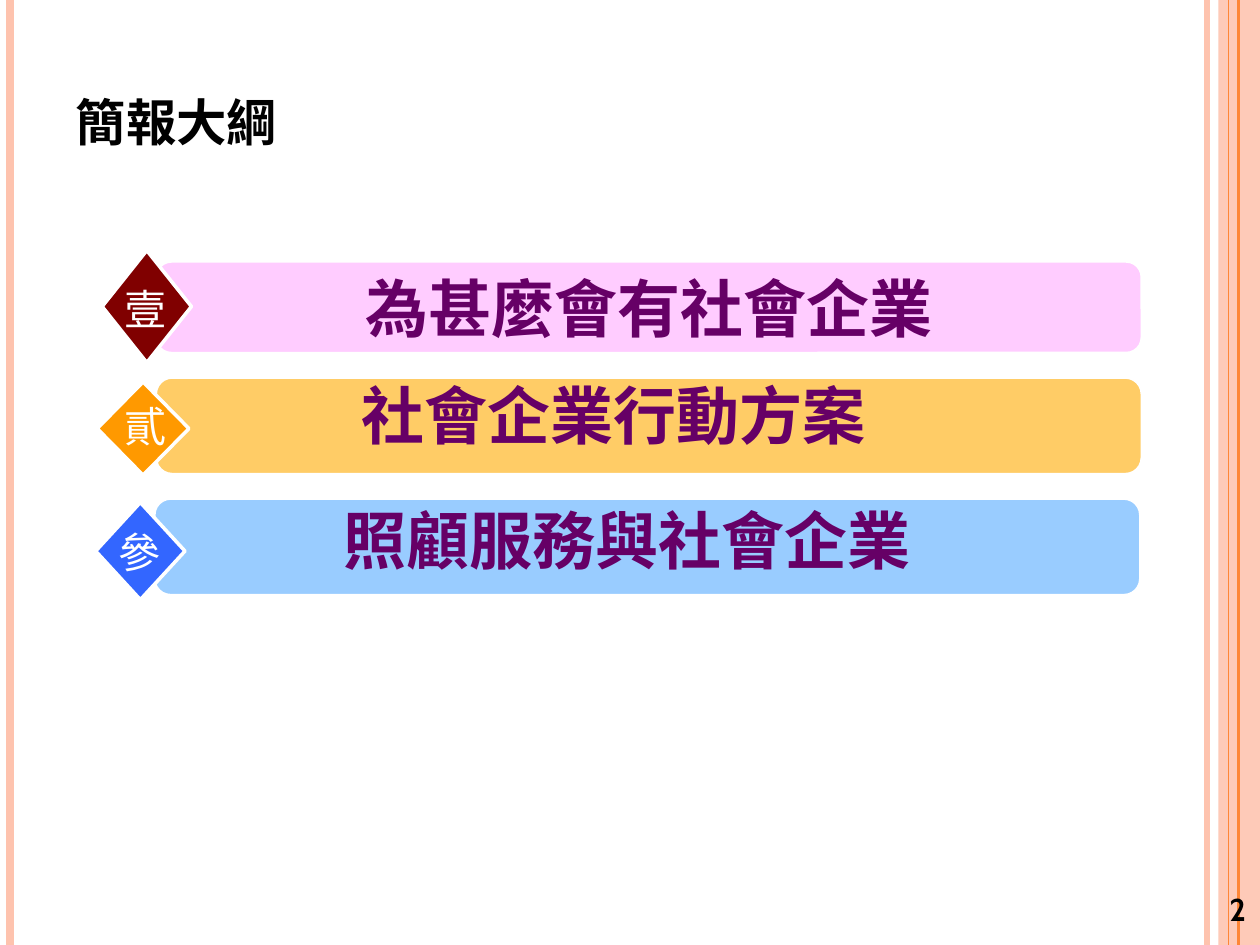
from lxml import etree
from pptx import Presentation
from pptx import util as u
from pptx.dml.color import RGBColor
from pptx.enum import shapes, text
from pptx.oxml.ns import qn

BLACK = RGBColor(0x00, 0x00, 0x00)
WHITE = RGBColor(0xFF, 0xFF, 0xFF)
PEACH = RGBColor(0xFE, 0xC3, 0xAE)
ORANGE = RGBColor(0xFE, 0x86, 0x37)
PURPLE = RGBColor(0x66, 0x00, 0x66)
PINK = RGBColor(0xFF, 0xCC, 0xFF)
MAROON = RGBColor(0x80, 0x00, 0x00)
GOLD = RGBColor(0xFF, 0xCC, 0x66)
AMBER = RGBColor(0xFF, 0x99, 0x00)
SKY = RGBColor(0x99, 0xCC, 0xFF)
BLUE = RGBColor(0x33, 0x66, 0xFF)
CJK = "Noto Sans CJK SC"
HEIGHT = 19.05


def add_block(kind, area, color, border):
    block = page.shapes.add_shape(kind, *map(u.Cm, area))
    block.shadow.inherit = False
    block.fill.solid()
    block.fill.fore_color.rgb = color
    if border:
        block.line.color.rgb = WHITE
        block.line.width = u.Pt(border)
    else:
        block.line.fill.background()
    return block


def write(box, words, face, size, color, bold, align, anchor):
    frame = box.text_frame
    frame.word_wrap = True
    frame.vertical_anchor = anchor
    para = frame.paragraphs[0]
    para.alignment = align
    span = para.add_run()
    span.text = words
    para.font.name = face
    para.font.size = u.Pt(size)
    para.font.bold = bold
    para.font.color.rgb = color
    latin = para.font._element.find(qn("a:latin"))
    east_asian = etree.Element(qn("a:ea"), typeface=face)
    latin.addnext(east_asian)
    return span


deck = Presentation()
deck.slide_width = u.Cm(25.4)
deck.slide_height = u.Cm(HEIGHT)
page = deck.slides.add_slide(deck.slide_layouts[5])
CENTER = text.PP_ALIGN.CENTER
MIDDLE = text.MSO_ANCHOR.MIDDLE
TOP = text.MSO_ANCHOR.TOP

band = add_block(shapes.MSO_SHAPE.RECTANGLE, (24.56, 0, 0.84, HEIGHT), PEACH, 0)
band_color = band.fill._xPr.find(qn("a:solidFill"))[0]
etree.SubElement(band_color, qn("a:alpha"), val="87000")

for x, color, width in [(24.33, PEACH, 3), (0.2, PEACH, 4.5),
                        (24.97, ORANGE, 1.5), (24.77, ORANGE, 0.75)]:
    stripe = page.shapes.add_connector(
        shapes.MSO_CONNECTOR.STRAIGHT, u.Cm(x), 0, u.Cm(x), u.Cm(HEIGHT))
    stripe.line.color.rgb = color
    stripe.line.width = u.Pt(width)
    etree.SubElement(stripe._element.spPr, qn("a:effectLst"))

title = page.shapes.title
title.left, title.top, title.width, title.height = map(u.Cm, (1.27, 0.76, 20.75, 3.18))
heading = write(title, "簡報大綱", "Arial", 36, BLACK, True, text.PP_ALIGN.LEFT, MIDDLE)
heading._r.get_or_add_rPr().set("cap", "small")

number = page.shapes.add_textbox(*map(u.Cm, (24.1, 17.6, 1.7, 1.45)))
write(number, "2", "Cabin", 18, BLACK, True, CENTER, MIDDLE)

sections = [
    ("壹", "為甚麼會有社會企業", PINK, MAROON, (3.15, 5.28, 19.86, 1.83),
     (2.06, 5.05, 1.8, 2.26), (1.96, 5.59, 1.96, 1.27), None),
    ("貳", "社會企業行動方案", GOLD, AMBER, (3.15, 7.62, 19.86, 1.93),
     (1.96, 7.7, 1.85, 1.88), (2.24, 7.95, 1.37, 1.3), (3.15, 7.47, 18.44, 1.8)),
    ("參", "照顧服務與社會企業", SKY, BLUE, (3.12, 10.06, 19.86, 1.93),
     (1.93, 10.13, 1.8, 1.96), (2.13, 10.49, 1.37, 1.27), (3.38, 9.98, 18.52, 1.78)),
]
for numeral, topic, bar_color, gem_color, bar_area, gem_area, numeral_area, topic_area in sections:
    bar = add_block(shapes.MSO_SHAPE.ROUNDED_RECTANGLE, bar_area, bar_color, 1)
    add_block(shapes.MSO_SHAPE.DIAMOND, gem_area, gem_color, 2)
    label = page.shapes.add_textbox(*map(u.Cm, topic_area)) if topic_area else bar
    write(label, topic, CJK, 36, PURPLE, True, CENTER, TOP if topic_area else MIDDLE)
    mark = page.shapes.add_textbox(*map(u.Cm, numeral_area))
    write(mark, numeral, CJK, 24, WHITE, False, CENTER, TOP)

deck.save("out.pptx")
